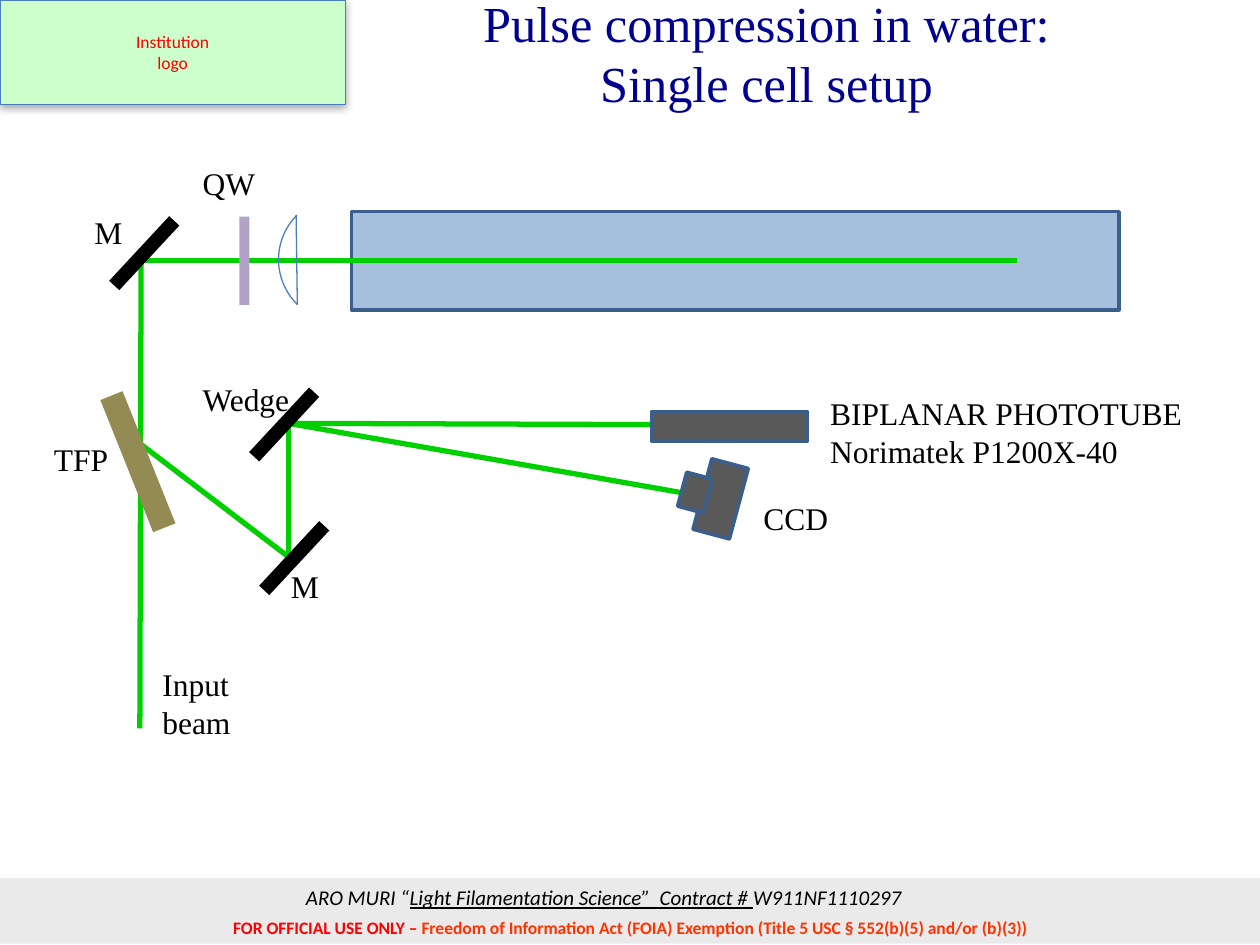
from typing import NamedTuple

from lxml import etree
from pptx import Presentation
from pptx.dml.color import RGBColor
from pptx.enum.shapes import MSO_CONNECTOR, MSO_SHAPE
from pptx.enum.text import MSO_ANCHOR, MSO_AUTO_SIZE, PP_ALIGN
from pptx.oxml.ns import qn
from pptx.util import Pt

RECT, ARC = MSO_SHAPE.RECTANGLE, MSO_SHAPE.ARC
LINE = MSO_CONNECTOR.STRAIGHT
LEFT, MID = PP_ALIGN.LEFT, PP_ALIGN.CENTER
TOP, CENTRE = MSO_ANCHOR.TOP, MSO_ANCHOR.MIDDLE
GROW, FIXED = MSO_AUTO_SIZE.SHAPE_TO_FIT_TEXT, MSO_AUTO_SIZE.NONE
PX = 9144
SANS, SERIF = "Calibri", "Times New Roman"
GREEN, BLUE, EDGE = "00D000", "4B7EBC", "3A5F8C"
BLACK, GREY = "000000", "595959"


class Part(NamedTuple):
    x: int
    y: int
    w: int
    h: int
    fill: str = ""
    edge: str = ""
    width: float = 2
    turn: float = 0
    kind: int = RECT


class Beam(NamedTuple):
    x1: int
    y1: int
    x2: int
    y2: int
    tint: str = GREEN
    width: float = 3


class Label(NamedTuple):
    x: int
    y: int
    w: int
    h: int
    text: str
    size: float = 18
    face: str = SERIF
    tint: str = BLACK
    align: int = LEFT
    anchor: int = TOP
    wrap: bool = True
    fit: int = GROW


LOGO = Part(0, 0, 274, 83, "CCFFCC", "4A7EBB", 0.75)
BAND = Part(0, 697, 1000, 52, "EAEAEA")
TANK = Part(279, 168, 609, 78, "4F81BD", EDGE)
BEAMS = [
    Beam(229, 336, 541, 391),
    Beam(111, 352, 229, 442),
    Beam(111, 578, 112, 203),
    Beam(111, 207, 807, 207),
    Beam(229, 440, 229, 336),
    Beam(229, 336, 517, 337),
]
LENS = Part(221, 156, 100, 100, "", BLUE, 0.75, 224.9, ARC)
FLAT = Beam(236, 242, 235, 171, BLUE, 0.75)
PARTS = [
    Part(190, 172, 8, 70, "B3A2C7"),
    Part(100, 310, 19, 113, "948A54", turn=338.2),
    Part(517, 327, 124, 23, GREY, EDGE),
    Part(557, 367, 30, 58, GREY, EDGE, turn=15),
    Part(541, 377, 21, 28, GREY, EDGE, turn=15),
]
MIRRORS = [(109, 166), (228, 408), (220, 302)]
LABELS = [
    Label(292, 0, 633, 83, "Pulse compression in water:\vSingle cell setup", 28.8,
          tint="000090", align=MID, anchor=CENTRE, fit=FIXED),
    Label(33, 344, 78, 40, "TFP"),
    Label(151, 125, 78, 40, "QW"),
    Label(65, 164, 78, 40, "M"),
    Label(221, 445, 78, 40, "M"),
    Label(596, 391, 78, 40, "CCD"),
    Label(151, 297, 109, 40, "Wedge"),
    Label(649, 308, 334, 71, "BIPLANAR PHOTOTUBE\nNorimatek P1200X-40"),
    Label(119, 523, 78, 71, "Input beam"),
]
NOTICE = Label(138, 723, 724, 27, "FOR OFFICIAL USE ONLY – ", 10, SANS, "FF0000", MID, wrap=False)
RULE = "Freedom of Information Act (FOIA) Exemption (Title 5 USC § 552(b)(5) and/or (b)(3))"
GRANT = Label(233, 697, 508, 30, "ARO MURI “", 12, SANS, wrap=False)
TOPIC, CODE = "Light Filamentation Science”  Contract # ", "W911NF1110297"


def paint(hue: str) -> RGBColor:
    """Turn a hex string into a colour."""
    return RGBColor.from_string(hue)


def fade(color, share: int) -> None:
    """Give a colour element an opacity in percent."""
    etree.SubElement(color, qn("a:alpha")).set("val", str(share * 1000))


def draw_part(slide, part: Part):
    """Draw one flat shape and return it."""
    box = [n * PX for n in part[:4]]
    shape = slide.shapes.add_shape(part.kind, *box)
    shape.shadow.inherit = False
    shape.rotation = part.turn
    if part.fill:
        shape.fill.solid()
        shape.fill.fore_color.rgb = paint(part.fill)
    else:
        shape.fill.background()
    if part.edge:
        shape.line.color.rgb = paint(part.edge)
        shape.line.width = Pt(part.width)
    else:
        shape.line.fill.background()
    return shape


def draw_beam(slide, beam: Beam) -> None:
    """Draw one straight line."""
    ends = [n * PX for n in beam[:4]]
    line = slide.shapes.add_connector(LINE, *ends)
    line.line.color.rgb = paint(beam.tint)
    line.line.width = Pt(beam.width)
    etree.SubElement(line._element.spPr, qn("a:effectLst"))


def style(run, size: float, face: str, tint: str) -> None:
    """Set the font of a run."""
    run.font.size = Pt(size)
    run.font.name = face
    run.font.color.rgb = paint(tint)


def write(frame, text: str, size: float, face: str, tint: str, align: int) -> None:
    """Fill a text frame and format its runs."""
    frame.text = text
    for para in frame.paragraphs:
        para.alignment = align
        for run in para.runs:
            style(run, size, face, tint)


def draw_label(slide, label: Label):
    """Draw one text box and return its first paragraph."""
    box = [n * PX for n in label[:4]]
    frame = slide.shapes.add_textbox(*box).text_frame
    frame.word_wrap = label.wrap
    frame.auto_size = label.fit
    frame.vertical_anchor = label.anchor
    write(frame, label.text, label.size, label.face, label.tint, label.align)
    return frame.paragraphs[0]


def extend(para, text: str, label: Label, tint: str):
    """Add a run in the font of a label and return it."""
    run = para.add_run()
    run.text = text
    style(run, label.size, label.face, tint)
    return run


def draw_logo(slide) -> None:
    """Draw the logo box with its soft shadow."""
    shape = draw_part(slide, LOGO)
    write(shape.text_frame, "Institution\nlogo", 10, SANS, "FF0000", MID)
    shape.text_frame.vertical_anchor = CENTRE
    effects = shape._element.spPr.find(qn("a:effectLst"))
    shade = etree.SubElement(effects, qn("a:outerShdw"), blurRad=str(Pt(5)),
                             dist=str(Pt(1.8)), dir="5400000", rotWithShape="0")
    fade(etree.SubElement(shade, qn("a:srgbClr"), val=BLACK), 35)


def draw_foot(slide) -> None:
    """Draw the footer band and its two lines."""
    draw_part(slide, BAND)
    para = draw_label(slide, NOTICE)
    extend(para, RULE, NOTICE, "FF3300")
    for run in para.runs:
        run.font.bold = True
    para = draw_label(slide, GRANT)
    extend(para, TOPIC, GRANT, BLACK).font.underline = True
    extend(para, CODE, GRANT, BLACK)
    for run in para.runs:
        run.font.italic = True


def main() -> None:
    """Build the slide and save it."""
    deck = Presentation()
    deck.slide_width, deck.slide_height = 1000 * PX, 750 * PX
    slide = deck.slides.add_slide(deck.slide_layouts[6])
    draw_logo(slide)
    draw_foot(slide)
    tank = draw_part(slide, TANK)
    fade(tank._element.spPr.find(qn("a:solidFill"))[0], 50)
    for beam in BEAMS:
        draw_beam(slide, beam)
    draw_part(slide, LENS)
    draw_beam(slide, FLAT)
    for part in PARTS:
        draw_part(slide, part)
    for x, y in MIRRORS:
        draw_part(slide, Part(x, y, 11, 70, BLACK, turn=42.9))
    for label in LABELS:
        draw_label(slide, label)
    deck.save("out.pptx")


if __name__ == "__main__":
    main()
